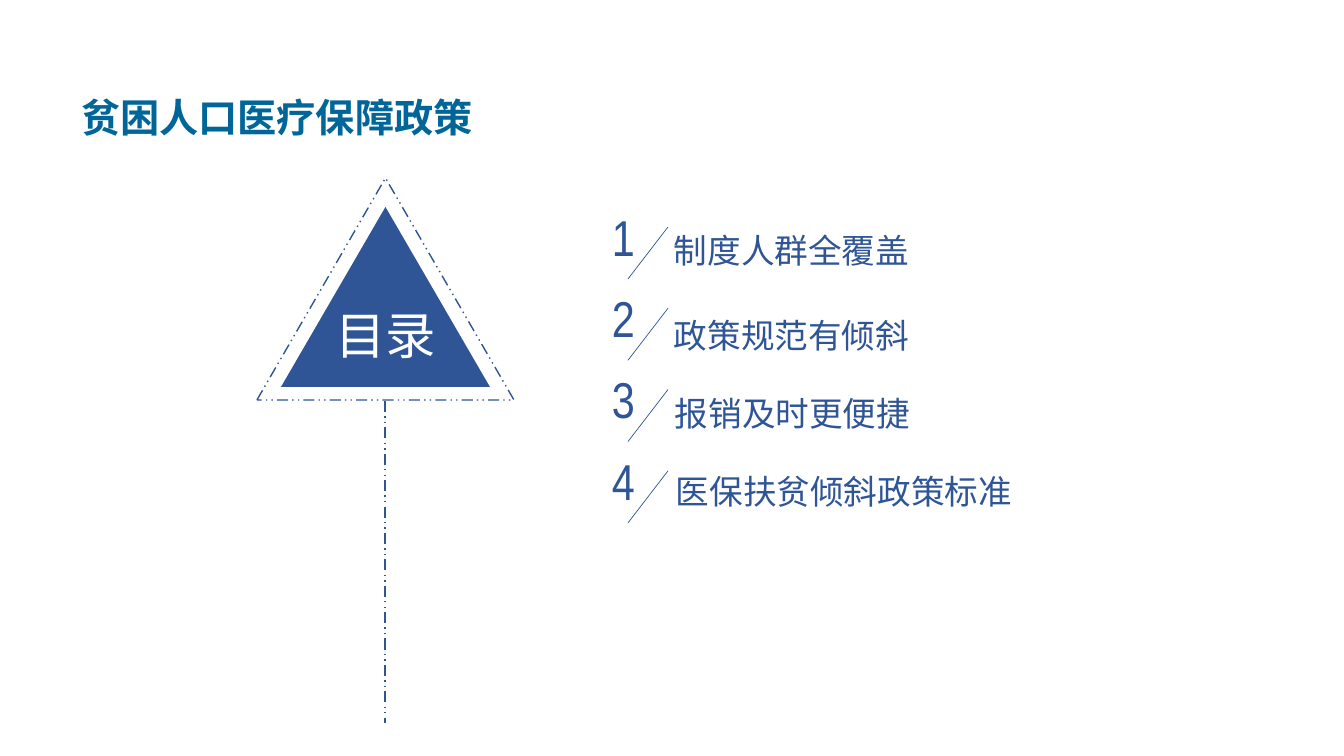
import pptx
import pptx.util
import pptx.dml.color
import pptx.oxml.ns
from dataclasses import dataclass
from lxml import etree
from pptx.enum.dml import MSO_LINE
from pptx.enum.shapes import MSO_CONNECTOR, MSO_SHAPE
from pptx.enum.text import MSO_ANCHOR, MSO_AUTO_SIZE, PP_ALIGN

TITLE = "贫困人口医疗保障政策"
BADGE = "目录"
# label, left, top, width
TOPICS = [
    ("制度人群全覆盖", 664, 225, 258),
    ("政策规范有倾斜", 664, 310, 258),
    ("报销及时更便捷", 665, 388, 258),
    ("医保扶贫倾斜政策标准", 666, 466, 360),
]


@dataclass(frozen=True)
class Theme:
    title: str = "006699"
    blue: str = "2F5597"
    white: str = "FFFFFF"
    cjk: str = "Noto Sans CJK SC"
    digits: str = "Arial Narrow"
    title_size: int = 28
    big_size: int = 36
    topic_size: int = 24


THEME = Theme()
EMU_PER_PX = 914400 / 100.8
FIRST_ROW, ROW_PITCH = 201, 81.3


def px(*lengths):
    return [round(length * EMU_PER_PX) for length in lengths]


def rgb(colour):
    return pptx.dml.color.RGBColor.from_string(colour)


def write(shape, text, *, size, colour, font=THEME.cjk, bold=False, wrap=True,
          align=PP_ALIGN.LEFT, anchor=MSO_ANCHOR.TOP):
    frame = shape.text_frame
    frame.auto_size = MSO_AUTO_SIZE.NONE
    frame.word_wrap = wrap
    frame.vertical_anchor = anchor
    para = frame.paragraphs[0]
    para.alignment = align
    span = para.add_run()
    span.text = text
    span.font.size = pptx.util.Pt(size)
    span.font.bold = bold
    span.font.color.rgb = rgb(colour)
    span.font.name = font
    east_asian = etree.SubElement(span.font._element, pptx.oxml.ns.qn("a:ea"))
    east_asian.set("typeface", font)


def add_text(page, place, text, **style):
    write(page.shapes.add_textbox(*px(*place)), text, **style)


def style_line(line, width, dash=None):
    line.color.rgb = rgb(THEME.blue)
    line.width = pptx.util.Pt(width)
    if dash is not None:
        line.dash_style = dash


def add_line(page, ends, width, dash=None):
    line = page.shapes.add_connector(MSO_CONNECTOR.STRAIGHT, *px(*ends))
    style_line(line.line, width, dash)
    etree.SubElement(line._element.spPr, pptx.oxml.ns.qn("a:effectLst"))


def add_triangle(page, place):
    triangle = page.shapes.add_shape(MSO_SHAPE.ISOSCELES_TRIANGLE, *px(*place))
    triangle.shadow.inherit = False
    return triangle


def add_title(page):
    title = page.shapes.title
    title.left, title.top, title.width, title.height = px(71, 88, 416, 57)
    write(title, TITLE, size=THEME.title_size, colour=THEME.title, bold=True, wrap=False)


def add_sign(page):
    badge = add_triangle(page, (281, 207, 209, 180))
    badge.fill.solid()
    badge.fill.fore_color.rgb = rgb(THEME.blue)
    badge.line.fill.background()
    frame = badge.text_frame
    frame.margin_left = frame.margin_right = frame.margin_top = 0
    frame.margin_bottom = px(16)[0]
    write(badge, BADGE, size=THEME.big_size, colour=THEME.white,
          align=PP_ALIGN.CENTER, anchor=MSO_ANCHOR.MIDDLE)

    border = add_triangle(page, (257, 178, 257, 222))
    border.fill.background()
    style_line(border.line, 1, MSO_LINE.DASH_DOT_DOT)
    add_line(page, (385, 401, 385, 723), 1, MSO_LINE.DASH_DOT_DOT)


def add_topics(page):
    for index, (label, left, top, width) in enumerate(TOPICS):
        row = FIRST_ROW + index * ROW_PITCH
        add_line(page, (668, row + 26, 628, row + 78), 0.5)
        add_text(page, (602, row, 42, 72), str(index + 1), size=THEME.big_size,
                 colour=THEME.blue, font=THEME.digits)
        add_text(page, (left, top, width, 50), label, size=THEME.topic_size,
                 colour=THEME.blue, wrap=False)


def main():
    deck = pptx.Presentation()
    deck.slide_width, deck.slide_height = px(1344, 756)
    page = deck.slides.add_slide(deck.slide_layouts.get_by_name("Title Only"))
    add_title(page)
    add_sign(page)
    add_topics(page)
    deck.save("out.pptx")


if __name__ == "__main__":
    main()
